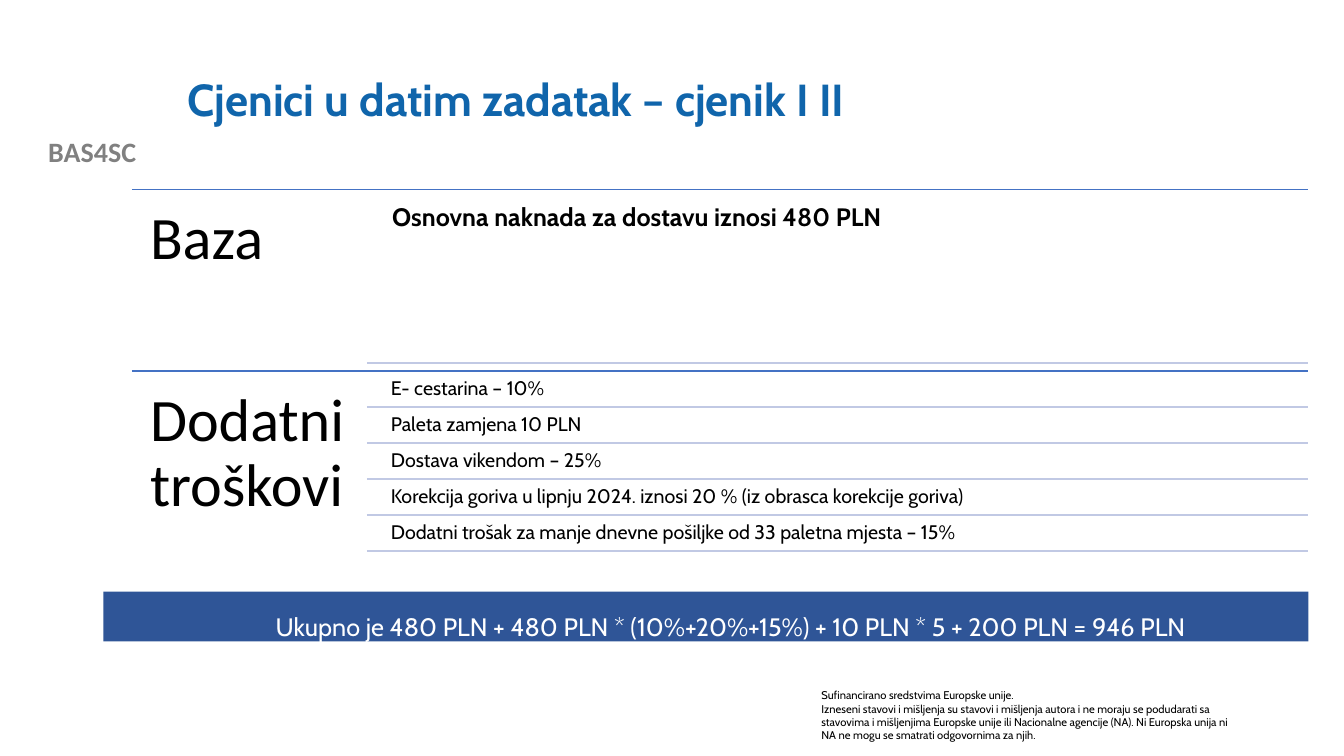
from dataclasses import dataclass

from lxml import etree
from pptx import Presentation
from pptx.dml.color import RGBColor
from pptx.enum.shapes import MSO_CONNECTOR, MSO_SHAPE
from pptx.enum.text import MSO_ANCHOR, PP_ALIGN
from pptx.oxml.ns import qn
from pptx.util import Pt


@dataclass(frozen=True)
class Theme:
    heading: str = "1065AB"
    project: str = "808080"
    text: str = "000000"
    light: str = "FFFFFF"
    bar: str = "2F5597"
    section_line: str = "4472C4"
    item_line: str = "C1C9E4"
    body_font: str = "Cabin"
    label_font: str = "Calibri"
    title_size: int = 32
    label_size: int = 43
    project_size: int = 20
    lead_size: int = 18
    item_size: int = 14
    note_size: int = 8


T = Theme()

prs = Presentation()
prs.slide_width, prs.slide_height = Pt(960), Pt(540)
s = prs.slides.add_slide(prs.slide_layouts[6])


def write(text, box, size, color=T.text, font=T.body_font, bold=False,
          spacing=1.0, inset=None, sp=None):
    """Fill the shape sp, or a new text box at box, and return its text frame."""
    sp = sp or s.shapes.add_textbox(*map(Pt, box))
    tf = sp.text_frame
    tf.word_wrap = True
    tf.vertical_anchor = MSO_ANCHOR.TOP
    if inset is not None:
        tf.margin_left = tf.margin_right = Pt(inset)
        tf.margin_top = tf.margin_bottom = Pt(inset)
    tf.text = text
    for p in tf.paragraphs:
        p.line_spacing = spacing
        for r in p.runs:
            r.font.name, r.font.size, r.font.bold = font, Pt(size), bold
            r.font.color.rgb = RGBColor.from_string(color)
    return tf


def rule(x, y, color):
    """Draw a horizontal line from x to the right edge of the content."""
    line = s.shapes.add_connector(MSO_CONNECTOR.STRAIGHT, Pt(x), Pt(y), Pt(RIGHT), Pt(y))
    line.line.color.rgb = RGBColor.from_string(color)
    line.line.width = Pt(1)
    etree.SubElement(line._element.spPr, qn("a:effectLst"))


RIGHT = 934.6
LABEL_X, RULE_X, ITEM_X = 94.3, 262.1, 275
ITEM_W = RIGHT - ITEM_X
SECTION_TOP, SECTION_H = 135.4, 129.6
COSTS_TOP = SECTION_TOP + SECTION_H
ITEM_H, ITEM_GAP = 24.5, 1.23

# Heading, project name and funding note
title = write("Cjenici u datim zadatak – cjenik I II", (126.7, 28.8, 767.5, 87.8),
              T.title_size, T.heading, bold=True, spacing=0.9)
title.vertical_anchor = MSO_ANCHOR.MIDDLE
project = write("BAS4SC", (0, 92.2, 131.8, 31.7), T.project_size, T.project,
                T.label_font, bold=True)
project.paragraphs[0].alignment = PP_ALIGN.CENTER
write("Sufinancirano sredstvima Europske unije.\n"
      "Izneseni stavovi i mišljenja su stavovi i mišljenja autora i ne moraju se "
      "podudarati sa stavovima i mišljenjima Europske unije ili Nacionalne agencije "
      "(NA). Ni Europska unija ni NA ne mogu se smatrati odgovornima za njih.",
      (579.6, 488.2, 314.6, 46.1), T.note_size)

# Section labels
for i, label in enumerate(["Baza", "Dodatni troškovi"]):
    top = SECTION_TOP + i * SECTION_H
    rule(LABEL_X, top, T.section_line)
    write(label, (LABEL_X, top, 167.8, SECTION_H), T.label_size,
          font=T.label_font, spacing=0.9, inset=12.9)

# Base fee
write("Osnovna naknada za dostavu iznosi 480 PLN", (ITEM_X, 141.1, ITEM_W, 118.1),
      T.lead_size, bold=True, spacing=0.9, inset=5.2)
rule(RULE_X, 259.2, T.item_line)

# Additional costs
costs = [
    "E- cestarina – 10%",
    "Paleta zamjena 10 PLN",
    "Dostava vikendom – 25%",
    "Korekcija goriva u lipnju 2024. iznosi 20 % (iz obrasca korekcije goriva)",
    "Dodatni trošak za manje dnevne pošiljke od 33 paletna mjesta – 15%",
]
for i, cost in enumerate(costs):
    top = COSTS_TOP + ITEM_GAP + i * (ITEM_H + ITEM_GAP)
    write(cost, (ITEM_X, top, ITEM_W, ITEM_H), T.item_size, spacing=0.9, inset=4.2)
    rule(RULE_X, top + ITEM_H, T.item_line)

# Total
bar = s.shapes.add_shape(MSO_SHAPE.RECTANGLE, Pt(73.8), Pt(422.6), Pt(860.8), Pt(35.6))
bar.shadow.inherit = False
bar.fill.solid()
bar.fill.fore_color.rgb = RGBColor.from_string(T.bar)
bar.line.fill.background()
total = write("Ukupno je 480 PLN + 480 PLN * (10%+20%+15%) + 10 PLN * 5 + 200 PLN = 946 PLN",
              None, T.lead_size, T.light, spacing=1.5, sp=bar)
p = total.paragraphs[0]
p.alignment = PP_ALIGN.CENTER
p.space_after = Pt(6)
p._p.get_or_add_pPr().set("indent", str(Pt(35.4)))

prs.save("out.pptx")
